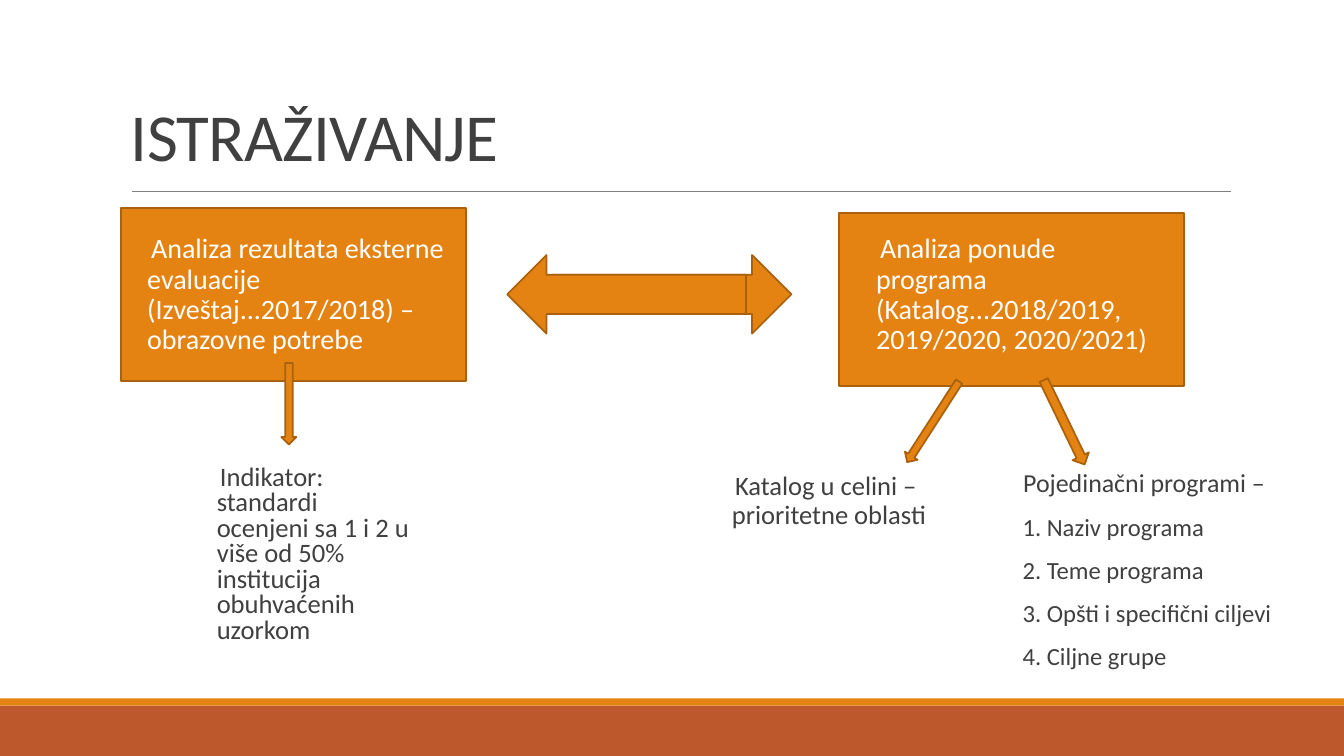
from dataclasses import dataclass
from typing import Any

import pptx
import pptx.dml.color
import pptx.enum.shapes
import pptx.enum.text
import pptx.oxml.ns
import pptx.util
from lxml import etree

PX = 9144  # EMU per px, 100 px to the inch
SHAPE = pptx.enum.shapes.MSO_SHAPE
ANCHOR = pptx.enum.text.MSO_ANCHOR


@dataclass(frozen=True)
class Theme:
    font: str = "Calibri"
    orange: str = "E48312"
    outline: str = "A9610D"
    rust: str = "BD582C"
    rule: str = "808080"
    dark: str = "404040"
    white: str = "FFFFFF"
    title_size: float = 48
    box_size: float = 20
    note_size: float = 19
    list_head_size: float = 18.5
    list_size: float = 17.6
    outline_width: float = 1.25
    rule_width: float = 0.5


THEME = Theme()


@dataclass(frozen=True)
class Area:
    left: int
    top: int
    width: int
    height: int

    def emu(self) -> tuple[int, ...]:
        return tuple(v * PX for v in (self.left, self.top, self.width, self.height))


@dataclass(frozen=True)
class Block:
    area: Area
    kind: Any = SHAPE.RECTANGLE
    fill: str = THEME.orange
    outlined: bool = True
    rotation: float = 0


@dataclass(frozen=True)
class Line:
    text: str
    size: float


@dataclass(frozen=True)
class Note:
    area: Area
    lines: tuple[Line, ...]
    spacing: float = 0.9
    color: str = THEME.dark


FOOTER = (
    Block(Area(0, 700, 1333, 50), fill=THEME.rust, outlined=False),
    Block(Area(0, 693, 1333, 7), outlined=False),
)
ANALYSES = tuple(Block(Area(left, top, 342, 172)) for left, top in ((832, 211), (120, 206)))
ARROWS = tuple(
    Block(area, SHAPE.RIGHT_ARROW, rotation=rotation)
    for area, rotation in (
        (Area(246, 393, 81, 15), 90),
        (Area(878, 411, 95, 15), 122.8),
        (Area(1009, 410, 93, 18), 64.1),
        (Area(548, 253, 237, 78), 0),
        (Area(503, 253, 237, 78), 180),
    )
)
PROGRAM_ITEMS = ("1. Naziv programa", "2. Teme programa",
                 "3. Opšti i specifični cilјevi", "4. Cilјne grupe")
NOTES = (
    Note(Area(136, 228, 309, 194),
         (Line("Analiza rezultata eksterne evaluacije (Izveštaj...2017/2018) – obrazovne potrebe",
               THEME.box_size),), color=THEME.white),
    Note(Area(859, 228, 287, 194),
         (Line("Analiza ponude programa (Katalog...2018/2019, 2019/2020, 2020/2021)",
               THEME.box_size),), color=THEME.white),
    Note(Area(205, 457, 202, 194),
         (Line("Indikator: standardi ocenjeni sa 1 i 2 u više od 50% institucija "
               "obuhvaćenih uzorkom", THEME.note_size),), spacing=0.8),
    Note(Area(716, 464, 287, 194),
         (Line("Katalog u celini – prioritetne oblasti", THEME.note_size),)),
    Note(Area(1002, 464, 321, 212),
         (Line("Pojedinačni programi –", THEME.list_head_size),
          *(Line(item, THEME.list_size) for item in PROGRAM_ITEMS)), spacing=0.8),
)


def rgb(color: str) -> pptx.dml.color.RGBColor:
    return pptx.dml.color.RGBColor.from_string(color)


def apply(target: Any, values: dict[str, Any]) -> None:
    for name, value in values.items():
        setattr(target, name, value)


def add_child(parent: Any, tag: str, **attributes: str) -> Any:
    return etree.SubElement(parent, pptx.oxml.ns.qn(tag), attributes)


def add_block(slide: Any, block: Block) -> None:
    shape = slide.shapes.add_shape(block.kind, *block.area.emu())
    shape.shadow.inherit = False
    shape.rotation = block.rotation
    shape.fill.solid()
    shape.fill.fore_color.rgb = rgb(block.fill)
    if block.outlined:
        shape.line.color.rgb = rgb(THEME.outline)
        shape.line.width = pptx.util.Pt(THEME.outline_width)
    else:
        shape.line.fill.background()


def add_rule(slide: Any, left: int, right: int, y: int) -> None:
    rule = slide.shapes.add_connector(
        pptx.enum.shapes.MSO_CONNECTOR.STRAIGHT, left * PX, y * PX, right * PX, y * PX)
    rule.line.color.rgb = rgb(THEME.rule)
    rule.line.width = pptx.util.Pt(THEME.rule_width)
    add_child(rule._element.spPr, "a:effectLst")


def add_frame(slide: Any, area: Area, frame_format: dict[str, Any]) -> Any:
    frame = slide.shapes.add_textbox(*area.emu()).text_frame
    apply(frame, {"word_wrap": True, **frame_format})
    return frame


def write(paragraph: Any, line: Line, color: str, paragraph_format: dict[str, Any]) -> Any:
    apply(paragraph, paragraph_format)
    run = paragraph.add_run()
    run.text = line.text
    apply(run.font, {"name": THEME.font, "size": pptx.util.Pt(line.size)})
    run.font.color.rgb = rgb(color)
    return run


def add_hanging_bullet(paragraph: Any) -> None:
    """Indent the paragraph behind a blank bullet."""
    properties = paragraph._p.get_or_add_pPr()
    properties.set("marL", str(10 * PX))
    properties.set("indent", str(-10 * PX))
    add_child(add_child(properties, "a:buClr"), "a:srgbClr", val=THEME.orange)
    add_child(properties, "a:buChar", char=" ")


def add_title(slide: Any, area: Area, text: str) -> None:
    frame = add_frame(slide, area, {"vertical_anchor": ANCHOR.BOTTOM})
    run = write(frame.paragraphs[0], Line(text, THEME.title_size), THEME.dark,
                {"line_spacing": 0.85})
    run.font._element.set("spc", "-50")


def add_note(slide: Any, note: Note) -> None:
    frame = add_frame(slide, note.area, {
        "vertical_anchor": ANCHOR.TOP, "margin_left": 0, "margin_right": 0,
        "margin_top": 5 * PX, "margin_bottom": 5 * PX})
    for index, line in enumerate(note.lines):
        paragraph = frame.add_paragraph() if index else frame.paragraphs[0]
        write(paragraph, line, note.color, {
            "line_spacing": note.spacing,
            "space_before": pptx.util.Pt(12),
            "space_after": pptx.util.Pt(2)})
        add_hanging_bullet(paragraph)


def main() -> None:
    presentation = pptx.Presentation()
    apply(presentation, {"slide_width": 1333 * PX, "slide_height": 750 * PX})
    slide = presentation.slides.add_slide(presentation.slide_layouts[6])
    for band in FOOTER:
        add_block(slide, band)
    add_rule(slide, 131, 1221, 190)
    for analysis in ANALYSES:
        add_block(slide, analysis)
    add_title(slide, Area(120, 20, 1100, 159), "ISTRAŽIVANJE")
    for note in NOTES:
        add_note(slide, note)
    for arrow in ARROWS:
        add_block(slide, arrow)
    presentation.save("out.pptx")


if __name__ == "__main__":
    main()
